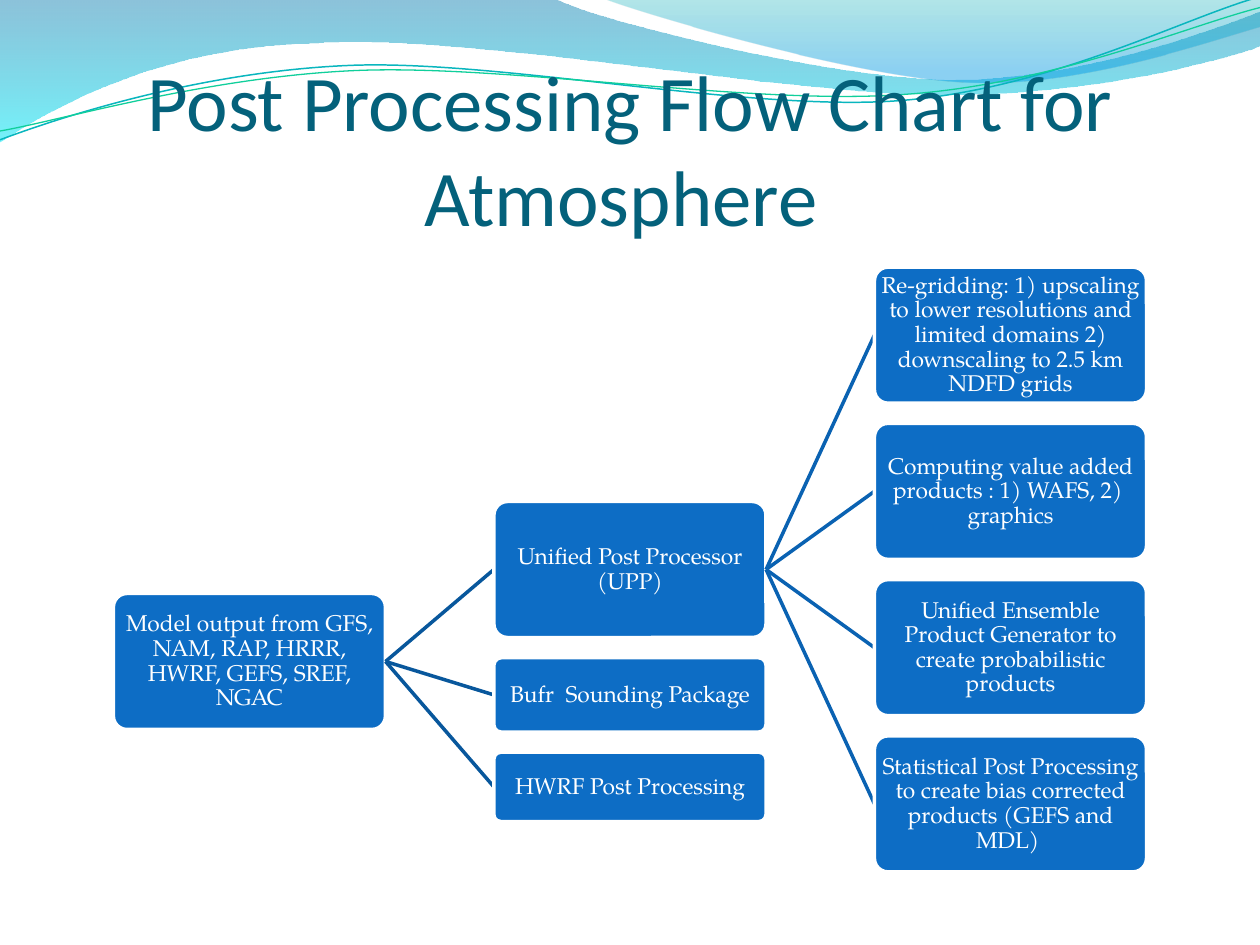
from dataclasses import dataclass

from lxml import etree
from pptx import Presentation
from pptx.dml.color import RGBColor
from pptx.enum.shapes import MSO_CONNECTOR, MSO_SHAPE
from pptx.enum.text import MSO_ANCHOR, MSO_AUTO_SIZE, PP_ALIGN
from pptx.oxml.ns import qn
from pptx.util import Inches, Pt

ROUNDED = MSO_SHAPE.ROUNDED_RECTANGLE
STRAIGHT = MSO_CONNECTOR.STRAIGHT
MIDDLE, BOTTOM = MSO_ANCHOR.MIDDLE, MSO_ANCHOR.BOTTOM
CENTER = PP_ALIGN.CENTER
NO_AUTOFIT = MSO_AUTO_SIZE.NONE
LEFT_SIDE, RIGHT_SIDE = 1, 3

COLORS = {
    "title": "04617B", "box": "0D6DC5", "white": "FFFFFF",
    "first link": "08579C", "second link": "0A62B2",
    "deep blue": "0079AD", "cyan": "00E9F7",
    "teal": "00ABB4", "sky": "0099E4",
    "teal line": "09B6BE", "green line": "10CF9B",
}
LINK_COLORS = ["first link", "second link"]
TITLE_FONT, BOX_FONT = "Calibri", "TeX Gyre Pagella"
BOX_WIDTH, COLUMN_STEP, ROW_GAP = 2.16, 3.02, 0.16

Point = tuple[float, float]


@dataclass
class Stop:
    position: float
    color: str
    opacity: int


@dataclass
class Wave:
    start: Point
    segments: list[tuple[Point, ...]]
    stops: tuple[Stop, ...] = ()
    line_color: str = ""
    line_width: float = 0


@dataclass
class Step:
    text: str
    height: float = 1.08
    children: tuple["Step", ...] = ()


WAVES = [
    Wave((0, 0), [
        ((4.4, -0.01),),
        ((4.76, 0.17), (6.64, 0.63), (7.58, 0.63)),
        ((8.53, 0.63), (9.58, 0.26), (10, 0.09)),
        ((10.01, 0.36),),
        ((9.83, 0.44), (8.7, 0.76), (7.46, 0.75)),
        ((6.22, 0.75), (3.82, 0.28), (2.57, 0.34)),
        ((1.29, 0.36), (0.46, 0.83), (-0.01, 1.13)),
    ], stops=(Stop(0, "deep blue", 45), Stop(1, "cyan", 55))),
    Wave((4.79, -0.01), [
        ((5.09, 0.11), (6.82, 0.62), (7.69, 0.65)),
        ((8.56, 0.69), (9.61, 0.32), (10, 0.21)),
        ((10, 0),),
    ], stops=(Stop(0, "teal", 30), Stop(0.8, "sky", 45))),
    Wave((0, 1.11), [
        ((0.48, 0.93), (1.58, 0.57), (2.77, 0.52)),
        ((3.95, 0.47), (5.93, 0.89), (7.13, 0.8)),
        ((8.33, 0.71), (9.38, 0.15), (9.98, -0.02)),
    ], line_color="teal line", line_width=0.85),
    Wave((0, 1.04), [
        ((0.47, 0.96), (1.64, 0.61), (2.83, 0.56)),
        ((4.03, 0.51), (5.97, 0.84), (7.17, 0.75)),
        ((8.36, 0.67), (9.41, 0.21), (10, 0.06)),
    ], line_color="green line", line_width=0.75),
]

FLOW = Step("Model output from GFS, NAM, RAP, HRRR, HWRF, GEFS, SREF, NGAC", children=(
    Step("Unified Post Processor (UPP)", children=(
        Step("Re-gridding: 1) upscaling to lower resolutions and limited domains "
             "2) downscaling to 2.5 km NDFD grids"),
        Step("Computing value added products : 1) WAFS, 2)  graphics"),
        Step("Unified Ensemble Product Generator to create probabilistic products"),
        Step("Statistical Post Processing to create bias corrected products (GEFS and MDL) "),
    )),
    Step("Bufr  Sounding Package", 0.59),
    Step("HWRF Post Processing", 0.55),
))


def color(name: str) -> RGBColor:
    return RGBColor.from_string(COLORS[name])


def add_text(text_frame, text: str, font_name: str, size: float, color_name: str) -> None:
    paragraph = text_frame.paragraphs[0]
    paragraph.alignment = CENTER
    run = paragraph.add_run()
    run.text = text
    run.font.name = font_name
    run.font.size = Pt(size)
    run.font.color.rgb = color(color_name)


def set_margins(text_frame, left: float, top: float, right: float, bottom: float) -> None:
    text_frame.margin_left, text_frame.margin_right = Inches(left), Inches(right)
    text_frame.margin_top, text_frame.margin_bottom = Inches(top), Inches(bottom)


def bend_segments(shape, segments: list[tuple[Point, ...]]) -> None:
    lines = iter(list(shape._element.spPr.iter(qn("a:lnTo"))))
    for controls in segments:
        group = [next(lines) for _ in controls]
        if len(group) == 3:
            group[0].addprevious(curve := etree.Element(qn("a:cubicBezTo")))
            for line in group:
                curve.append(line[0])
                line.getparent().remove(line)


def draw_wave(slide, wave: Wave) -> None:
    points = [wave.start, *(point for controls in wave.segments for point in controls)]
    vertices = [(Inches(x), Inches(y)) for x, y in points]
    builder = slide.shapes.build_freeform(*vertices[0])
    builder.add_line_segments(vertices[1:], close=False)
    shape = builder.convert_to_shape()
    bend_segments(shape, wave.segments)
    shape.shadow.inherit = False
    if not wave.stops:
        shape.fill.background()
        shape.line.color.rgb = color(wave.line_color)
        shape.line.width = Pt(wave.line_width)
        return
    shape.line.fill.background()
    shape.fill.gradient()
    shape.fill.gradient_angle = 270
    for gradient_stop, stop in zip(shape.fill.gradient_stops, wave.stops):
        gradient_stop.position = stop.position
        gradient_stop.color.rgb = color(stop.color)
    for element, stop in zip(shape._element.spPr.iter(qn("a:srgbClr")), wave.stops):
        etree.SubElement(element, qn("a:alpha")).set("val", str(stop.opacity * 1000))


def draw_box(slide, step: Step, left: float, top: float):
    box = slide.shapes.add_shape(ROUNDED, Inches(left), Inches(top),
                                 Inches(BOX_WIDTH), Inches(step.height))
    box.adjustments[0] = 0.1
    box.shadow.inherit = False
    box.fill.solid()
    box.fill.fore_color.rgb = color("box")
    box.line.color.rgb = color("white")
    box.line.width = Pt(2)
    text_frame = box.text_frame
    text_frame.word_wrap = True
    text_frame.vertical_anchor = MIDDLE
    set_margins(text_frame, 0.01, 0.01, 0.01, 0.01)
    add_text(text_frame, step.text, BOX_FONT, 13, "white")
    text_frame.paragraphs[0].line_spacing = 0.9
    return box


def draw_link(slide, parent, color_name: str):
    link = slide.shapes.add_connector(STRAIGHT, 0, 0, 0, 0)
    link.begin_connect(parent, RIGHT_SIDE)
    link.line.color.rgb = color(color_name)
    link.line.width = Pt(2)
    etree.SubElement(link._element.spPr, qn("a:effectLst"))
    return link


def draw_flow(slide, step: Step, left: float, middle: float, level: int = 0, parent=None) -> None:
    link = draw_link(slide, parent, LINK_COLORS[level - 1]) if parent else None
    box = draw_box(slide, step, left, middle - step.height / 2)
    if link:
        link.end_connect(box, LEFT_SIDE)
    stack_height = sum(child.height + ROW_GAP for child in step.children) - ROW_GAP
    top = middle - stack_height / 2
    for child in step.children:
        draw_flow(slide, child, left + COLUMN_STEP, top + child.height / 2, level + 1, box)
        top += child.height + ROW_GAP


def draw_title(slide, text: str) -> None:
    title = slide.shapes.title
    slide.shapes._spTree.append(title._element)
    title.left, title.top = Inches(0.5), Inches(0.67)
    title.width, title.height = Inches(9), Inches(1.25)
    text_frame = title.text_frame
    text_frame.word_wrap = True
    text_frame.auto_size = NO_AUTOFIT
    text_frame.vertical_anchor = BOTTOM
    set_margins(text_frame, 0, 0.05, 0, 0)
    add_text(text_frame, text, TITLE_FONT, 45, "title")


def main() -> None:
    presentation = Presentation()
    presentation.slide_width, presentation.slide_height = Inches(10), Inches(7.5)
    slide = presentation.slides.add_slide(presentation.slide_layouts[5])
    for wave in WAVES:
        draw_wave(slide, wave)
    draw_title(slide, "Post Processing Flow Chart for Atmosphere ")
    draw_flow(slide, FLOW, 0.9, 5.25)
    presentation.save("out.pptx")


if __name__ == "__main__":
    main()
